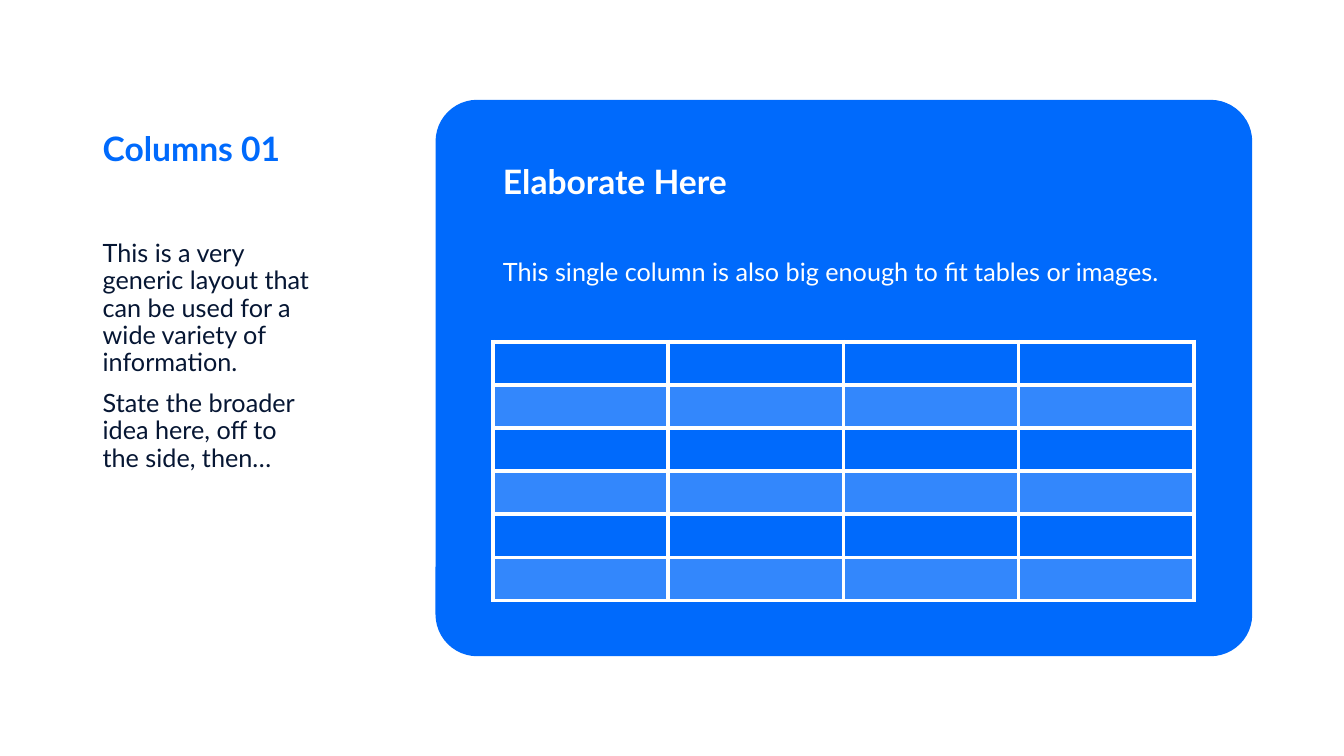
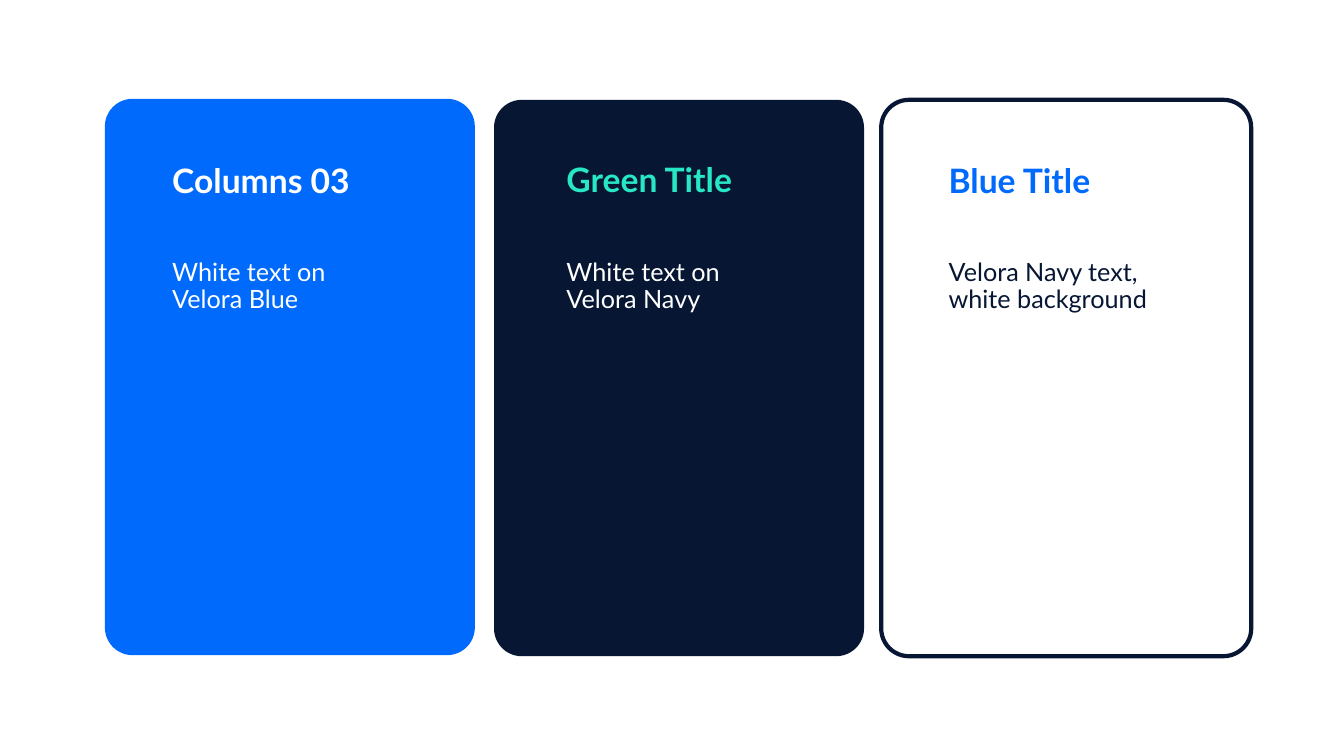
from dataclasses import dataclass

from lxml.etree import SubElement
from pptx import Presentation
from pptx.dml.color import RGBColor
from pptx.enum.shapes import MSO_SHAPE
from pptx.enum.text import MSO_ANCHOR
from pptx.oxml.ns import qn
from pptx.util import Inches, Pt


@dataclass(frozen=True)
class Theme:
    blue: RGBColor = RGBColor.from_string("006AFC")
    navy: RGBColor = RGBColor.from_string("061633")
    green: RGBColor = RGBColor.from_string("28E7C5")
    white: RGBColor = RGBColor.from_string("FFFFFF")
    font: str = "Lato"
    title_size: Pt = Pt(24)
    body_size: Pt = Pt(18)
    line_spacing: float = 0.9
    paragraph_gap: Pt = Pt(10)
    outline: Pt = Pt(3)
    corner: float = 0.075
    card_height: float = 5.52
    title_height: float = 0.72
    body_top: float = 2.53
    body_height: float = 3.29
    band_opacity: int = 20


THEME = Theme()


def inches(area):
    return [Inches(length) for length in area]


def set_attributes(target, values):
    for name, value in values.items():
        setattr(target, name, value)


def add_text(page, area, paragraphs, anchor=MSO_ANCHOR.TOP, **font_values):
    box = page.shapes.add_textbox(*inches(area))
    frame = box.text_frame
    set_attributes(frame, {"word_wrap": True, "vertical_anchor": anchor})
    for index, text in enumerate(paragraphs):
        para = frame.add_paragraph() if index else frame.paragraphs[0]
        para.line_spacing = THEME.line_spacing
        para.space_before = THEME.paragraph_gap if index else Pt(0)
        span = para.add_run()
        span.text = text
        span.font.color.rgb = font_values["color"]
        set_attributes(span.font, {"name": THEME.font,
                                   "size": font_values["size"],
                                   "bold": font_values["bold"]})


def add_title(page, left, top, width, text, color, anchor=MSO_ANCHOR.BOTTOM):
    add_text(page, (left, top, width, THEME.title_height), [text], anchor,
             color=color, size=THEME.title_size, bold=True)


def add_body(page, area, paragraphs, color):
    add_text(page, area, paragraphs, color=color, size=THEME.body_size, bold=False)


def add_card(page, left, top, width, fill=None):
    """Draw a rounded panel; without a fill it gets a navy outline."""
    card = page.shapes.add_shape(
        MSO_SHAPE.ROUNDED_RECTANGLE, *inches((left, top, width, THEME.card_height)))
    card.shadow.inherit = False
    card.adjustments[0] = THEME.corner
    if fill is None:
        card.fill.background()
        card.line.color.rgb = THEME.navy
        card.line.width = THEME.outline
    else:
        card.fill.solid()
        card.fill.fore_color.rgb = fill
        card.line.fill.background()


def add_borders(cell):
    properties = cell._tc.get_or_add_tcPr()
    for side in ("lnL", "lnR", "lnT", "lnB"):
        line = SubElement(properties, qn(f"a:{side}"), w=str(THEME.outline))
        fill = SubElement(line, qn("a:solidFill"))
        SubElement(fill, qn("a:srgbClr"), val=str(THEME.white))


def fill_band(cell):
    """Fill a cell with translucent white."""
    cell.fill.solid()
    cell.fill.fore_color.rgb = THEME.white
    color = cell._tc.tcPr.find(qn("a:solidFill")).find(qn("a:srgbClr"))
    SubElement(color, qn("a:alpha"), val=str(THEME.band_opacity * 1000))


def add_banded_table(page, area, row_count, column_count):
    table = page.shapes.add_table(row_count, column_count, *inches(area)).table
    set_attributes(table, {"first_row": False, "horz_banding": False})
    for row_index, row in enumerate(table.rows):
        for cell in row.cells:
            add_borders(cell)
            if row_index % 2:
                fill_band(cell)
            else:
                cell.fill.background()


def build_table_page(page):
    left, width = 4.89, 6.95
    add_card(page, 4.32, 0.99, 8.1, THEME.blue)
    add_title(page, left, 1.33, 4.1, "Elaborate Here", THEME.white)
    add_body(page, (left, THEME.body_top, width, THEME.body_height),
             ["This single column is also big enough to fit tables or images."],
             THEME.white)
    add_title(page, 0.92, 1.13, 3.4, "Columns 01", THEME.blue, MSO_ANCHOR.MIDDLE)
    add_body(page, (0.92, 2.34, 2.32, 4.29),
             ["This is a very generic layout that can be used for a wide variety "
              "of information.",
              "State the broader idea here, off to the side, then…"],
             THEME.navy)
    add_banded_table(page, (left, 3.39, width, 2.57), 6, 4)


def build_columns_page(page):
    card_width, text_width = 3.67, 2.41
    columns = [
        (1.04, 0.98, THEME.blue, 1.61, 1.32, "Columns 03", THEME.white,
         "White text on Velora Blue", THEME.white),
        (4.9, 0.99, THEME.navy, 5.52, 1.31, "Green Title", THEME.green,
         "White text on Velora Navy", THEME.white),
        (8.74, 0.99, None, 9.31, 1.32, "Blue Title", THEME.blue,
         "Velora Navy text, white background", THEME.navy),
    ]
    for (card_left, card_top, fill, text_left, title_top,
         title, title_color, body, body_color) in columns:
        add_card(page, card_left, card_top, card_width, fill)
        add_title(page, text_left, title_top, text_width, title, title_color)
        add_body(page, (text_left, THEME.body_top, text_width, THEME.body_height),
                 [body], body_color)


def main():
    deck = Presentation()
    set_attributes(deck, {"slide_width": Inches(13.33), "slide_height": Inches(7.5)})
    blank = deck.slide_layouts[6]
    for build in (build_table_page, build_columns_page):
        build(deck.slides.add_slide(blank))
    deck.save("out.pptx")


if __name__ == "__main__":
    main()
